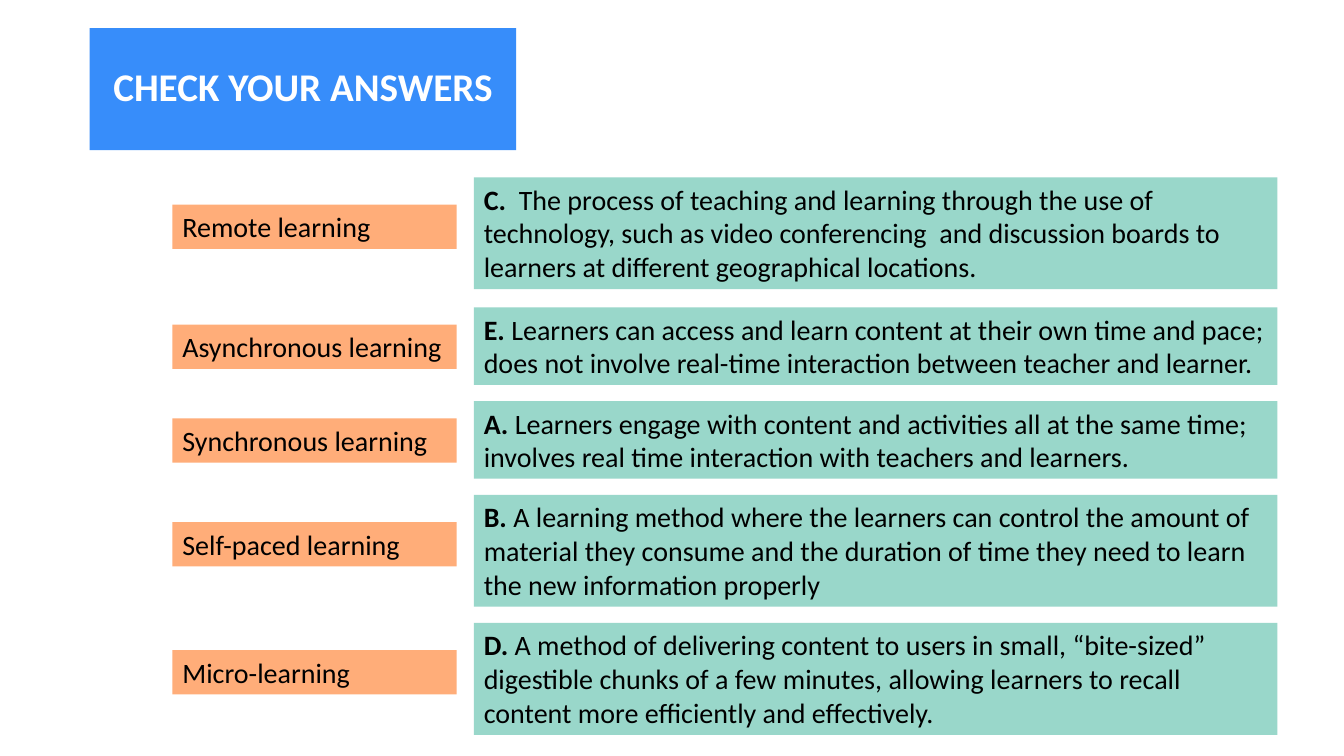
"""Build the slide that pairs learning terms with their definitions."""
from pptx import Presentation
from pptx import util as u
from pptx.dml.color import RGBColor
from pptx.enum import shapes, text

TITLE_BLUE, TERM_ORANGE, ANSWER_GREEN = "378DFA", "FFAD79", "99D7CA"
TERM_LEFT, TERM_WIDTH, TERM_HEIGHT = 1.71, 2.82, 0.44
ANSWER_LEFT, ANSWER_WIDTH = 4.7, 7.97
TALL, SHORT = 1.11, 0.77
TERM_OFFSET = {TALL: 0.27, SHORT: 0.17}

ROWS = [
    (1.76, TALL, "Remote learning", "C.  ",
     "The process of teaching and learning through the use of technology, such as video "
     "conferencing  and discussion boards to learners at different geographical locations."),
    (3.05, SHORT, "Asynchronous learning", "E. ",
     "Learners can access and learn content at their own time and pace; does not involve "
     "real-time interaction between teacher and learner."),
    (3.98, SHORT, "Synchronous learning", "A. ",
     "Learners engage with content and activities all at the same time; involves real time "
     "interaction with teachers and learners."),
    (4.91, TALL, "Self-paced learning", "B. ",
     "A learning method where the learners can control the amount of material they consume "
     "and the duration of time they need to learn the new information properly"),
    (6.18, TALL, "Micro-learning", "D. ",
     "A method of delivering content to users in small, “bite-sized” digestible chunks of a "
     "few minutes, allowing learners to recall content more efficiently and effectively."),
]


def rgb(value):
    """Return the colour for a hex string."""
    return RGBColor.from_string(value)


def add_run(p, content, color="000000", **formats):
    """Add a formatted run to a paragraph."""
    r = p.add_run()
    r.text = content
    settings = {"name": "Calibri", "size": u.Pt(20), "bold": False, **formats}
    for name, value in settings.items():
        setattr(r.font, name, value)
    r.font.color.rgb = rgb(color)


def add_box(s, left, top, width, height, fill, align=text.PP_ALIGN.LEFT,
            anchor=text.MSO_ANCHOR.TOP):
    """Add a filled rectangle and return its first paragraph."""
    sp = s.shapes.add_shape(shapes.MSO_SHAPE.RECTANGLE, u.Inches(left), u.Inches(top),
                            u.Inches(width), u.Inches(height))
    sp.shadow.inherit = False
    sp.fill.solid()
    sp.fill.fore_color.rgb = rgb(fill)
    sp.line.fill.background()
    tf = sp.text_frame
    for name, value in {"word_wrap": True, "vertical_anchor": anchor}.items():
        setattr(tf, name, value)
    p = tf.paragraphs[0]
    p.alignment = align
    return p


def add_title(s, content):
    """Add the title banner."""
    p = add_box(s, 0.89, 0.28, 4.23, 1.21, TITLE_BLUE,
                text.PP_ALIGN.CENTER, text.MSO_ANCHOR.MIDDLE)
    p.line_spacing = 0.9
    add_run(p, content, "FFFFFF", size=u.Pt(28), bold=True)


def add_row(s, top, height, term, letter, definition):
    """Add a term and the lettered definition beside it."""
    p = add_box(s, ANSWER_LEFT, top, ANSWER_WIDTH, height, ANSWER_GREEN)
    add_run(p, letter, bold=True)
    add_run(p, definition)
    p = add_box(s, TERM_LEFT, top + TERM_OFFSET[height], TERM_WIDTH, TERM_HEIGHT, TERM_ORANGE)
    add_run(p, term)


def main():
    """Build and save the presentation."""
    prs = Presentation()
    prs.slide_width, prs.slide_height = u.Inches(13.33), u.Inches(7.5)
    s = prs.slides.add_slide(prs.slide_layouts[6])
    add_title(s, "CHECK YOUR ANSWERS")
    for row in ROWS:
        add_row(s, *row)
    prs.save("out.pptx")


if __name__ == "__main__":
    main()
